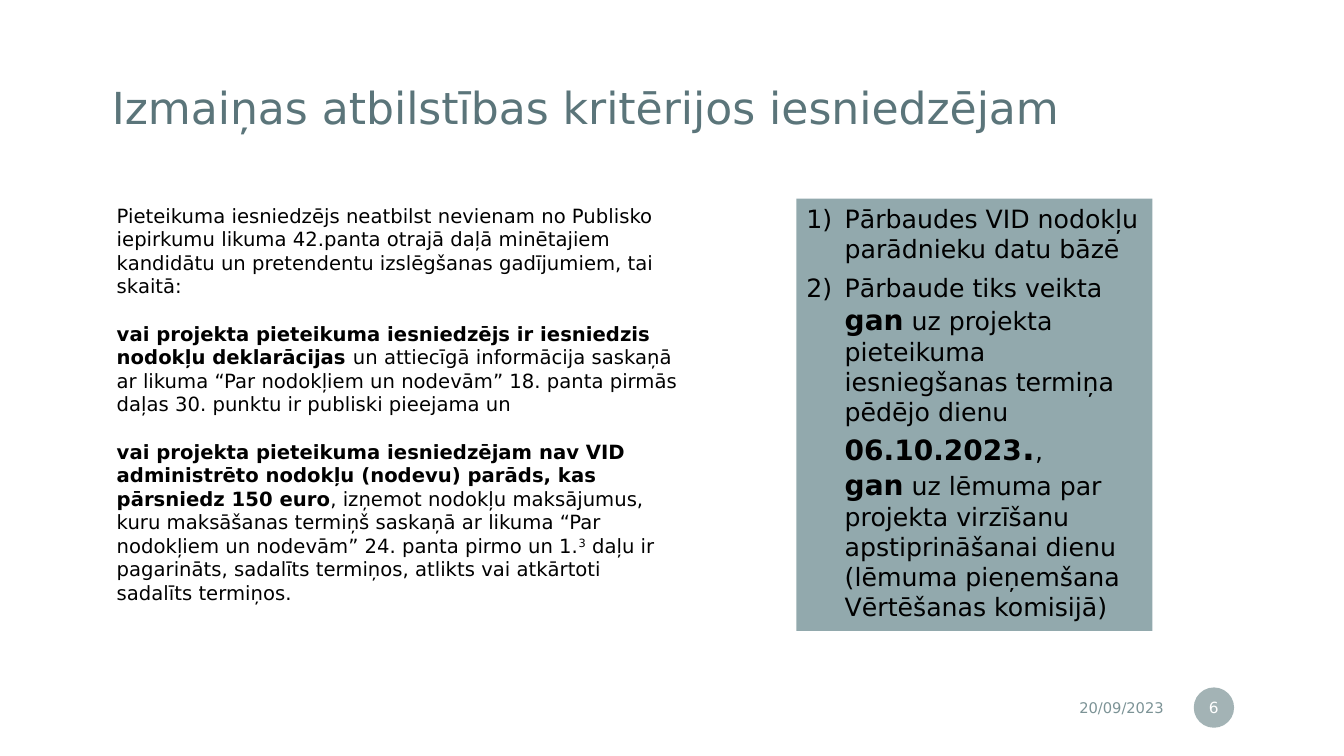
from lxml import etree
from pptx import Presentation
from pptx import util as u
from pptx.dml.color import RGBColor
from pptx.enum import shapes, text
from pptx.oxml.ns import qn

PX = 9144  # 100 px to the inch
FONT = "DejaVu Sans"
COLORS = {"title": "5B757A", "footer": "7C9396", "panel": "92A9AD",
          "body": "000000", "white": "FFFFFF"}


def add_box(at, paragraphs, size, color, preset=None, fill=None,
            anchor=text.MSO_ANCHOR.TOP, align=text.PP_ALIGN.LEFT, inset=(10, 5)):
    """Add a text box or filled shape; each paragraph lists (text, bold, size) runs."""
    box = [v * PX for v in at]
    if preset is None:
        sp = s.shapes.add_textbox(*box)
    else:
        sp = s.shapes.add_shape(preset, *box)
        sp.shadow.inherit = False
        sp.fill.solid()
        sp.fill.fore_color.rgb = RGBColor.from_string(COLORS[fill])
        sp.line.fill.background()
    tf = sp.text_frame
    tf.word_wrap = True
    tf.vertical_anchor = anchor
    tf.margin_left = tf.margin_right = inset[0] * PX
    tf.margin_top = tf.margin_bottom = inset[1] * PX
    for i, runs in enumerate(paragraphs):
        p = tf.paragraphs[0] if i == 0 else tf.add_paragraph()
        p.alignment = align
        for words, bold, run_size in runs:
            for j, line in enumerate(words.split("\n")):
                if j:
                    p.add_line_break()
                if line:
                    r = p.add_run()
                    r.text = line
                    if bold:
                        r.font.bold = True
                    if run_size:
                        r.font.size = u.Pt(run_size)
        p.font.name = FONT
        p.font.size = u.Pt(size)
        p.font.color.rgb = RGBColor.from_string(COLORS[color])
        for r in p.runs:
            r.font.name = FONT
            r.font.size = r.font.size or u.Pt(size)
            r.font.color.rgb = RGBColor.from_string(COLORS[color])
    return sp


prs = Presentation()
prs.slide_width, prs.slide_height = 1333 * PX, 750 * PX
s = prs.slides.add_slide(prs.slide_layouts[6])
MIDDLE = text.MSO_ANCHOR.MIDDLE

# Title
title = add_box((91, 48, 1018, 123),
                [[("Izmaiņas atbilstības kritērijos iesniedzējam", False, None)]],
                31.5, "title", anchor=MIDDLE, inset=(20, 20))
title.text_frame.paragraphs[0].line_spacing = 0.9

# Date and slide number
add_box((863, 684, 301, 35), [[("20/09/2023", False, None)]], 10.5, "footer",
        anchor=MIDDLE, align=text.PP_ALIGN.RIGHT)
badge = add_box((1184, 682, 40, 40), [[("6", False, None)]], 11, "white",
                shapes.MSO_SHAPE.OVAL, "footer", MIDDLE, text.PP_ALIGN.CENTER, (2, 5))
badge_color = badge.fill._xPr.find(qn("a:solidFill"))[0]
etree.SubElement(badge_color, qn("a:alpha"), val="70000")

# Eligibility criteria
criteria = add_box((106, 197, 576, 411), [
    [("Pieteikuma iesniedzējs neatbilst nevienam no Publisko iepirkumu likuma 42.panta "
      "otrajā daļā minētajiem kandidātu un pretendentu izslēgšanas gadījumiem, tai skaitā:",
      False, None)],
    [("vai projekta pieteikuma iesniedzējs ir iesniedzis nodokļu deklarācijas ", True, None),
     ("un attiecīgā informācija saskaņā ar likuma “Par nodokļiem un nodevām” 18. panta "
      "pirmās daļas 30. punktu ir publiski pieejama un", False, None)],
    [("vai projekta pieteikuma iesniedzējam nav VID administrēto nodokļu (nodevu) parāds, "
      "kas pārsniedz 150 euro", True, None),
     (", izņemot nodokļu maksājumus, kuru maksāšanas termiņš saskaņā ar likuma “Par "
      "nodokļiem un nodevām” 24. panta pirmo un 1.", False, None),
     ("3", False, None),
     (" daļu ir pagarināts, sadalīts termiņos, atlikts vai atkārtoti sadalīts termiņos.",
      False, None)],
], 14, "body")
for p in criteria.text_frame.paragraphs[1:]:
    p.space_before = u.Pt(17)
superscript = criteria.text_frame.paragraphs[2].runs[2]
superscript.font._element.set("baseline", "30000")

# Numbered checks
checks = add_box((790, 197, 353, 429), [
    [("Pārbaudes VID nodokļu parādnieku datu bāzē", False, None)],
    [("Pārbaude tiks veikta ", False, None),
     ("gan", True, 20),
     (" uz projekta pieteikuma iesniegšanas termiņa pēdējo dienu ", False, None),
     ("06.10.2023", True, 20),
     (".", True, 24),
     (",\n", False, None),
     ("gan", True, 20),
     (" uz lēmuma par projekta virzīšanu apstiprināšanai dienu (lēmuma pieņemšana "
      "Vērtēšanas komisijā)", False, None)],
], 18, "body", shapes.MSO_SHAPE.RECTANGLE, "panel")
checks.text_frame.paragraphs[0].space_after = u.Pt(6)
for p in checks.text_frame.paragraphs:
    pPr = p._p.get_or_add_pPr()
    pPr.set("marL", str(38 * PX))
    pPr.set("indent", str(-38 * PX))
    number = etree.Element(qn("a:buAutoNum"), type="arabicParenR")
    pPr.find(qn("a:defRPr")).addprevious(number)

prs.save("out.pptx")
